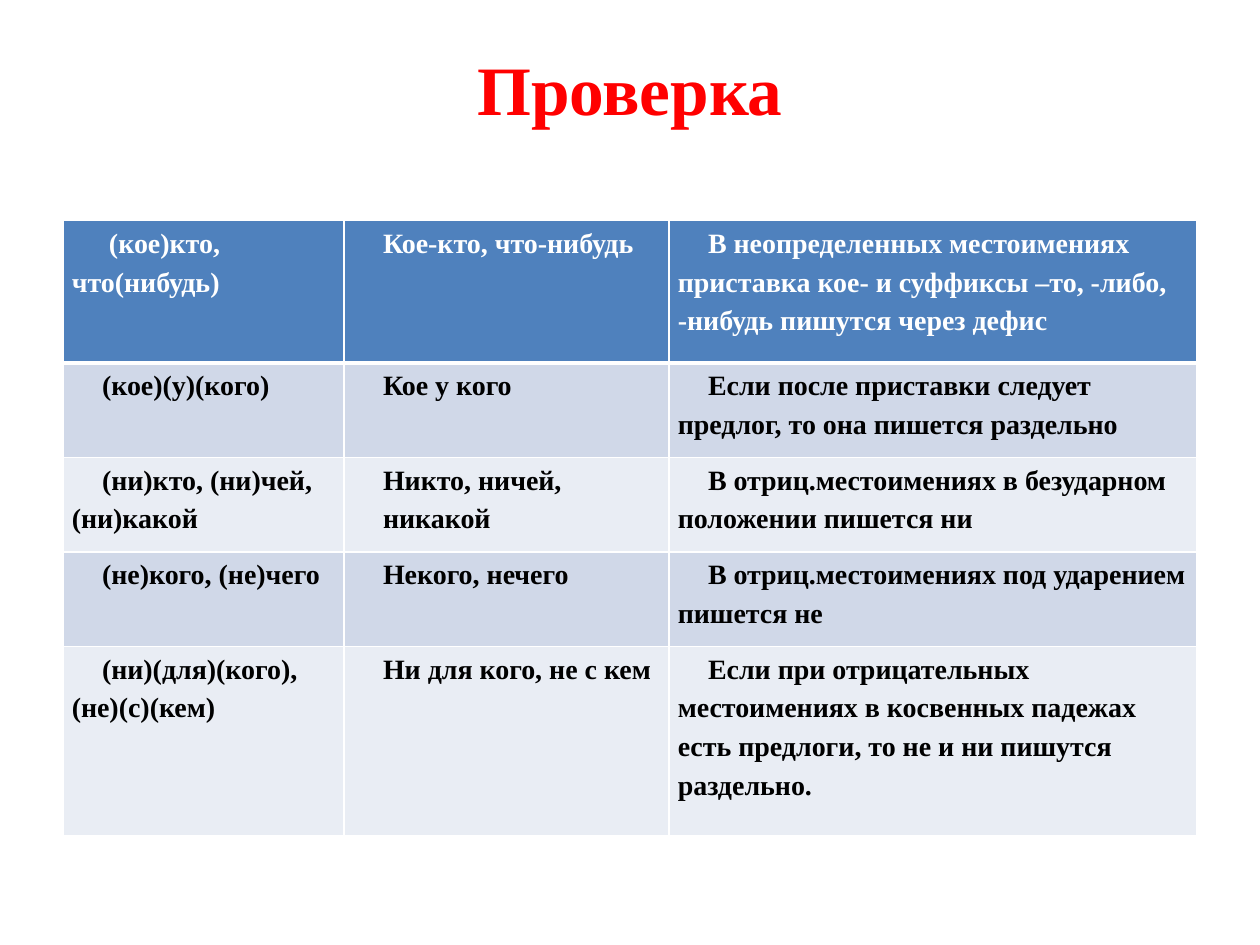
from lxml.etree import SubElement
from pptx import Presentation
from pptx.dml.color import RGBColor
from pptx.enum.text import MSO_ANCHOR as Anchor, PP_ALIGN as Align
from pptx.oxml.ns import qn
from pptx.util import Inches, Pt

COLORS = {
    "title": "FF0000",
    "header": "4F81BD",
    "odd": "D0D8E8",
    "even": "E9EDF4",
    "light": "FFFFFF",
    "dark": "000000",
}
COLUMN_WIDTHS = [2.23, 2.58, 4.19]
ROW_HEIGHTS = [1.13, 0.75, 0.75, 0.75, 1.5]
PRONOUNS = [
    [
        " (кое)кто, что(нибудь)",
        "Кое-кто, что-нибудь",
        "В неопределенных местоимениях приставка кое- и суффиксы –то, -либо, "
        "-нибудь пишутся через дефис",
    ],
    [
        "(кое)(у)(кого)",
        "Кое у кого",
        "Если после приставки следует предлог, то она пишется раздельно",
    ],
    [
        "(ни)кто, (ни)чей, (ни)какой",
        "Никто, ничей,\nникакой",
        "В отриц.местоимениях в безударном положении пишется ни",
    ],
    [
        "(не)кого, (не)чего",
        "Некого, нечего",
        "В отриц.местоимениях под ударением пишется не",
    ],
    [
        "(ни)(для)(кого), (не)(с)(кем)",
        "Ни для кого, не с кем",
        "Если при отрицательных местоимениях в косвенных падежах есть предлоги, "
        "то не и ни пишутся раздельно.",
    ],
]


def write_text(frame, text, font, size, color, align=Align.LEFT, spacing=1.0, indent=0):
    frame.word_wrap = True
    for index, line in enumerate(text.split("\n")):
        paragraph = frame.add_paragraph() if index else frame.paragraphs[0]
        paragraph.alignment = align
        paragraph.line_spacing = spacing
        if indent:
            properties = paragraph._p.get_or_add_pPr()
            properties.set("marL", "0")
            properties.set("indent", str(Inches(indent)))
        run = paragraph.add_run()
        run.text = line
        run.font.name = font
        run.font.size = Pt(size)
        run.font.bold = True
        run.font.color.rgb = RGBColor.from_string(color)


class SlideBuilder:
    font = "Times New Roman"

    def __init__(self, slide):
        self.slide = slide

    def title(self, text, left, top, width, height):
        shape = self.slide.shapes.add_textbox(
            Inches(left), Inches(top), Inches(width), Inches(height)
        )
        shape.text_frame.vertical_anchor = Anchor.MIDDLE
        write_text(shape.text_frame, text, font=self.font, size=39.6,
                   color=COLORS["title"], align=Align.CENTER)

    def borders(self, cell, top, bottom):
        properties = cell._tc.get_or_add_tcPr()
        for side, width in (("L", 1), ("R", 1), ("T", top), ("B", bottom)):
            line = SubElement(properties, qn(f"a:ln{side}"), w=str(Pt(width)))
            fill = SubElement(line, qn("a:solidFill"))
            SubElement(fill, qn("a:srgbClr"), val=COLORS["light"])

    def cell(self, cell, text, row):
        cell.margin_left = cell.margin_right = Inches(0.07)
        cell.margin_top = cell.margin_bottom = 0
        self.borders(cell, top=3 if row == 1 else 1, bottom=3 if row == 0 else 1)
        background = "header" if row == 0 else "odd" if row % 2 else "even"
        cell.fill.solid()
        cell.fill.fore_color.rgb = RGBColor.from_string(COLORS[background])
        write_text(cell.text_frame, text, font=self.font, size=16,
                   color=COLORS["dark" if row else "light"], spacing=1.25, indent=0.24)

    def table(self, rows, left, top, widths, heights):
        table = self.slide.shapes.add_table(
            len(heights), len(widths), Inches(left), Inches(top),
            Inches(sum(widths)), Inches(sum(heights)),
        ).table
        for column, width in zip(table.columns, widths):
            column.width = Inches(width)
        for row, height in zip(table.rows, heights):
            row.height = Inches(height)
        for row, texts in enumerate(rows):
            for column, text in enumerate(texts):
                self.cell(table.cell(row, column), text, row)


def main():
    presentation = Presentation()
    presentation.slide_width = Inches(10)
    presentation.slide_height = Inches(7.5)
    builder = SlideBuilder(presentation.slides.add_slide(presentation.slide_layouts[6]))
    builder.title("Проверка", 0.5, 0.3, 9, 0.79)
    builder.table(PRONOUNS, 0.5, 1.75, COLUMN_WIDTHS, ROW_HEIGHTS)
    presentation.save("out.pptx")


if __name__ == "__main__":
    main()
